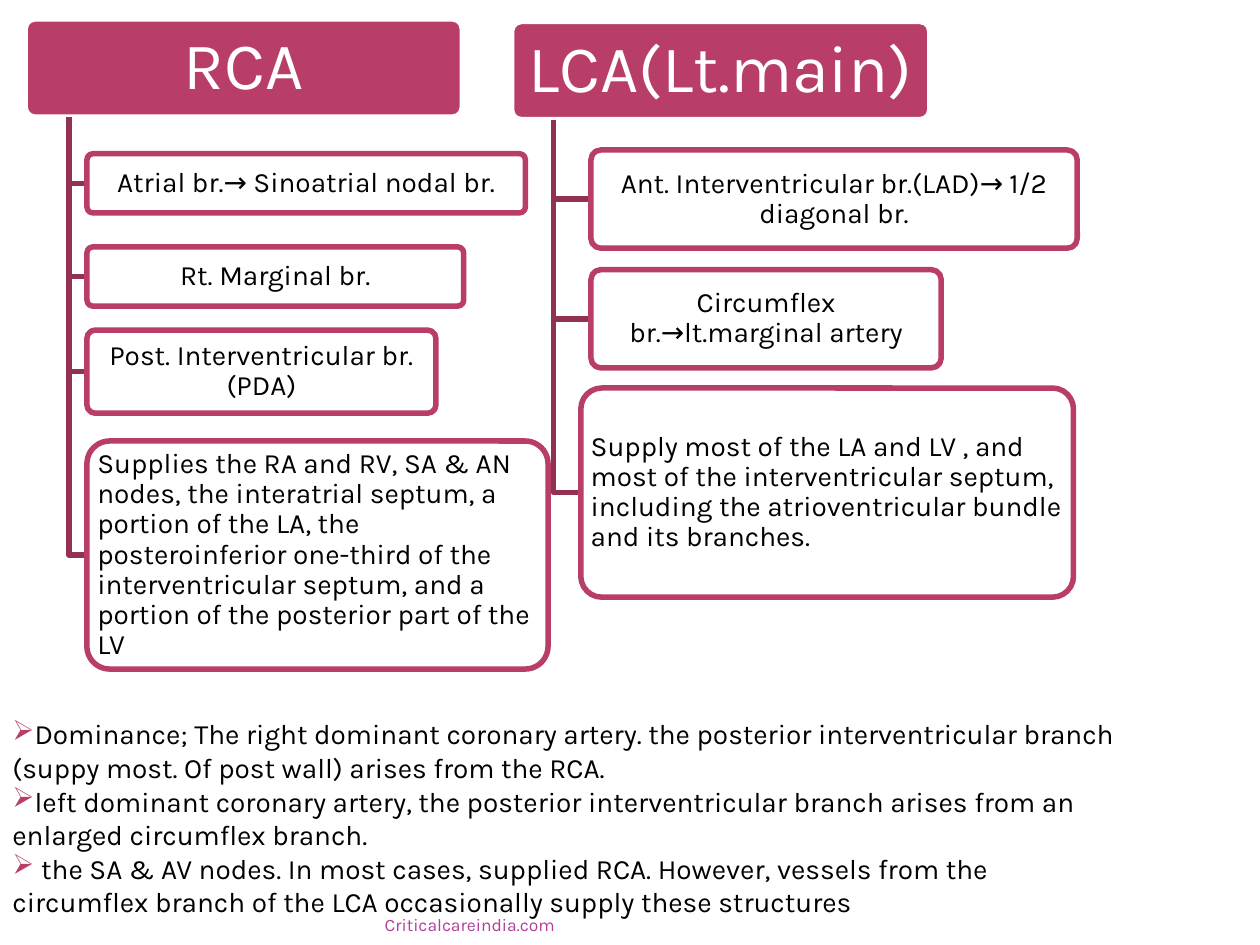
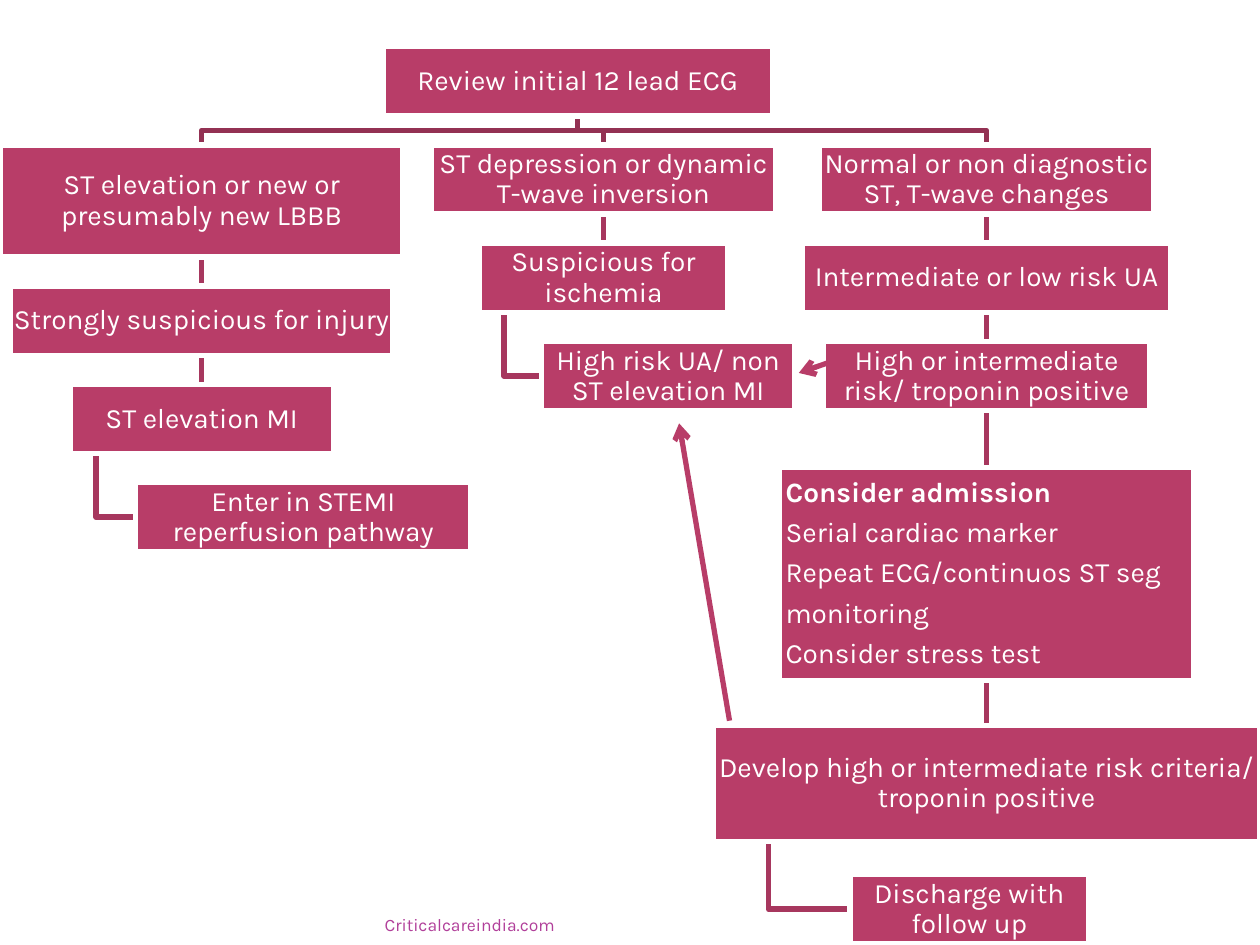
from dataclasses import dataclass

from lxml import etree
from pptx import Presentation
from pptx import util as u
from pptx.dml.color import RGBColor
from pptx.enum import shapes, text
from pptx.oxml.ns import qn

COLORS = {"rose": "B83D68", "trunk": "933153", "link": "A7375E",
          "white": "FFFFFF", "black": "000000", "footer": "B13F9A"}
FONT = "Karla"
BODY = 16
LINE = 3.15
BOX_HEIGHT = 0.55
ROW_GAP = 0.23
LEFT, CENTER, RIGHT = text.PP_ALIGN.LEFT, text.PP_ALIGN.CENTER, text.PP_ALIGN.RIGHT


@dataclass
class Box:
    left: float
    top: float
    width: float
    height: float
    words: str
    align: int = CENTER

    @property
    def bottom(self):
        return self.top + self.height

    @property
    def middle(self):
        return self.top + self.height / 2

    @property
    def hook_x(self):
        return self.left + self.width / 10


def rgb(name):
    return RGBColor.from_string(COLORS[name])


# Text
def set_frame(frame, insets, anchor):
    frame.word_wrap = True
    frame.vertical_anchor = anchor
    frame.margin_left, frame.margin_top, frame.margin_right, frame.margin_bottom = map(u.Inches, insets)


def add_span(para, words, color, size=BODY, bold=False):
    span = para.add_run()
    span.text = words
    span.font.name, span.font.size, span.font.bold = FONT, u.Pt(size), bold
    span.font.color.rgb = rgb(color)


def paragraphs(frame, count):
    return [frame.paragraphs[0]] + [frame.add_paragraph() for _ in range(count - 1)]


def add_textbox(slide, left, top, width, height, insets, anchor):
    box = slide.shapes.add_textbox(*map(u.Inches, (left, top, width, height)))
    set_frame(box.text_frame, insets, anchor)
    return box.text_frame


def add_bullet(para, symbol):
    props = para._p.get_or_add_pPr()
    props.set("marL", "0")
    props.set("indent", "0")
    color = etree.SubElement(props, qn("a:buClr"))
    etree.SubElement(color, qn("a:srgbClr"), val=COLORS["rose"])
    etree.SubElement(props, qn("a:buChar"), char=symbol)


def add_footer(slide):
    frame = add_textbox(slide, 0.5, 7.17, 4, 0.25, (0.1, 0, 0.1, 0), text.MSO_ANCHOR.BOTTOM)
    para = frame.paragraphs[0]
    para.alignment = RIGHT
    add_span(para, "Criticalcareindia.com", "footer", 10)


# Shapes and lines
def add_box(slide, box, kind, fill, outline, color, insets, size=BODY, bold_first=False):
    shape = slide.shapes.add_shape(kind, *map(u.Inches, (box.left, box.top, box.width, box.height)))
    shape.shadow.inherit = False
    if kind == shapes.MSO_SHAPE.ROUNDED_RECTANGLE:
        shape.adjustments[0] = 0.1
    shape.fill.solid()
    shape.fill.fore_color.rgb = rgb(fill)
    shape.line.color.rgb = rgb(outline)
    shape.line.width = u.Pt(LINE)
    set_frame(shape.text_frame, insets, text.MSO_ANCHOR.MIDDLE)
    lines = box.words.split("\n")
    for index, (para, words) in enumerate(zip(paragraphs(shape.text_frame, len(lines)), lines)):
        para.alignment = box.align
        para.line_spacing = 0.9
        para.space_after = u.Pt(5.8)
        add_span(para, words, color, size, bold_first and index == 0)


def add_line(slide, start, end, color, width=LINE, arrow=False):
    line = slide.shapes.add_connector(shapes.MSO_CONNECTOR.STRAIGHT, *map(u.Inches, start + end))
    line.line.color.rgb = rgb(color)
    line.line.width = u.Pt(width)
    props = line._element.spPr
    if arrow:
        etree.SubElement(line.line._get_or_add_ln(), qn("a:tailEnd"), type="arrow")
    etree.SubElement(props, qn("a:effectLst"))


def add_elbow(slide, points, color):
    points = [tuple(map(u.Inches, point)) for point in points]
    builder = slide.shapes.build_freeform(*points[0], scale=1.0)
    builder.add_line_segments(points[1:], close=False)
    shape = builder.convert_to_shape()
    shape.shadow.inherit = False
    shape.fill.background()
    shape.line.color.rgb = rgb(color)
    shape.line.width = u.Pt(LINE)


def add_hook(slide, parent, child, color):
    x = parent.hook_x
    add_elbow(slide, [(x, parent.bottom), (x, child.middle), (child.left, child.middle)], color)


# Artery slide
RCA = Box(0.2, 0.15, 3.47, 0.78, "RCA")
RCA_BRANCHES = [
    Box(0.69, 1.22, 3.48, 0.47, "Atrial br.→ Sinoatrial nodal br."),
    Box(0.69, 1.96, 2.99, 0.47, "Rt. Marginal br."),
    Box(0.69, 2.62, 2.77, 0.66, "Post. Interventricular br.(PDA)"),
    Box(0.69, 3.5, 3.66, 1.81,
        "Supplies the RA and RV, SA & AN nodes, the interatrial septum, a portion of the LA, "
        "the posteroinferior one-third of the interventricular septum, and a portion of the "
        "posterior part of the LV", LEFT),
]
LCA = Box(4.06, 0.17, 3.32, 0.78, "LCA(Lt.main)")
LCA_BRANCHES = [
    Box(4.69, 1.19, 3.86, 0.78, "Ant. Interventricular br.(LAD)→ 1/2 diagonal br."),
    Box(4.69, 2.14, 2.78, 0.78, "Circumflex br.→lt.marginal artery"),
    Box(4.61, 3.08, 3.91, 1.66,
        "Supply most of the LA and LV , and most of the interventricular septum, including "
        "the atrioventricular bundle and its branches.", LEFT),
]
DOMINANCE_NOTES = [
    "Dominance; The right dominant coronary artery. the posterior interventricular branch "
    "(suppy most. Of post wall) arises from the RCA.",
    "left dominant coronary artery, the posterior interventricular branch arises from an "
    "enlarged circumflex branch.",
    " the SA & AV nodes. In most cases, supplied RCA. However, vessels from the circumflex "
    "branch of the LCA occasionally supply these structures",
]


def add_artery(slide, head, branches):
    rounded = shapes.MSO_SHAPE.ROUNDED_RECTANGLE
    add_box(slide, head, rounded, "rose", "white", "white", (0.08, 0.05, 0.08, 0.05), 38)
    for branch in branches:
        add_hook(slide, head, branch, "trunk")
        add_box(slide, branch, rounded, "white", "rose", "black", (0.03, 0.02, 0.03, 0.02))


def build_arteries(slide):
    add_artery(slide, RCA, RCA_BRANCHES)
    add_artery(slide, LCA, LCA_BRANCHES)
    frame = add_textbox(slide, 0, 5.64, 8.98, 1.72, (0.1, 0.05, 0.1, 0.05), text.MSO_ANCHOR.TOP)
    for para, note in zip(paragraphs(frame, len(DOMINANCE_NOTES)), DOMINANCE_NOTES):
        add_bullet(para, "➢")
        add_span(para, note, "black")
    add_footer(slide)


# ECG slide: each column is a centre and its steps (gap above, width, height, words)
ADMISSION = ("Consider admission\nSerial cardiac marker\nRepeat ECG/continuos ST seg\n"
             "monitoring\nConsider stress test")
ECG_ROOT = Box(3.04, 0.37, 3.09, BOX_HEIGHT, "Review initial 12 lead ECG")
ECG_COLUMNS = [
    (1.6, [(ROW_GAP, 3.19, 0.89, "ST elevation or new or presumably new LBBB"),
           (ROW_GAP, 3.03, BOX_HEIGHT, "Strongly suspicious for injury"),
           (ROW_GAP, 2.09, BOX_HEIGHT, "ST elevation MI"),
           (ROW_GAP, 2.66, BOX_HEIGHT, "Enter in STEMI reperfusion pathway")]),
    (4.79, [(ROW_GAP, 2.73, BOX_HEIGHT, "ST depression or dynamic T-wave inversion"),
            (ROW_GAP, 1.97, BOX_HEIGHT, "Suspicious for ischemia"),
            (ROW_GAP, 2.01, BOX_HEIGHT, "High risk UA/ non ST elevation MI")]),
    (7.83, [(ROW_GAP, 2.65, BOX_HEIGHT, "Normal or non diagnostic ST, T-wave changes"),
            (ROW_GAP, 2.93, BOX_HEIGHT, "Intermediate or low risk UA"),
            (ROW_GAP, 2.59, BOX_HEIGHT, "High or intermediate risk/ troponin positive"),
            (0.45, 3.29, 1.69, ADMISSION),
            (0.36, 4.33, 0.92, "Develop high or intermediate risk criteria/ troponin positive"),
            (0.26, 1.89, BOX_HEIGHT, "Discharge with follow up")]),
]


def stack_column(center, steps):
    """Stack the steps downward; the last hangs a quarter of the way along its parent."""
    boxes, bottom = [], ECG_ROOT.bottom
    for index, (gap, width, height, words) in enumerate(steps):
        left = center - width / 2
        if index == len(steps) - 1:
            left = boxes[-1].left + boxes[-1].width / 4
        boxes.append(Box(left, bottom + gap, width, height, words,
                         LEFT if words == ADMISSION else CENTER))
        bottom = boxes[-1].bottom
    return boxes


def build_ecg_flow(slide):
    columns = [(center, stack_column(center, steps)) for center, steps in ECG_COLUMNS]
    root_x = ECG_ROOT.left + ECG_ROOT.width / 2
    bar_y = ECG_ROOT.bottom + ROW_GAP / 2

    # Links lie under the boxes
    for center, boxes in columns:
        for parent, child in zip(boxes, boxes[1:]):
            if child is boxes[-1]:
                add_hook(slide, parent, child, "link")
            else:
                add_line(slide, (center, parent.bottom), (center, child.top), "link")
        add_elbow(slide, [(root_x, ECG_ROOT.bottom), (root_x, bar_y),
                          (center, bar_y), (center, boxes[0].top)], "trunk")

    for box in [ECG_ROOT] + [box for _, boxes in columns for box in boxes]:
        listed = box.align == LEFT
        add_box(slide, box, shapes.MSO_SHAPE.RECTANGLE, "rose", "white", "white",
                (0.05 if listed else 0.01, 0.01, 0.01, 0.01), bold_first=listed)

    # Arrows back to the high risk step
    add_line(slide, (5.79, 5.72), (5.39, 3.36), "rose", 3, arrow=True)
    add_line(slide, (6.57, 2.88), (6.34, 2.96), "rose", 3, arrow=True)
    add_footer(slide)


def main():
    deck = Presentation()
    deck.slide_width, deck.slide_height = u.Inches(10), u.Inches(7.5)
    for build in (build_arteries, build_ecg_flow):
        build(deck.slides.add_slide(deck.slide_layouts[6]))
    deck.save("out.pptx")


if __name__ == "__main__":
    main()
